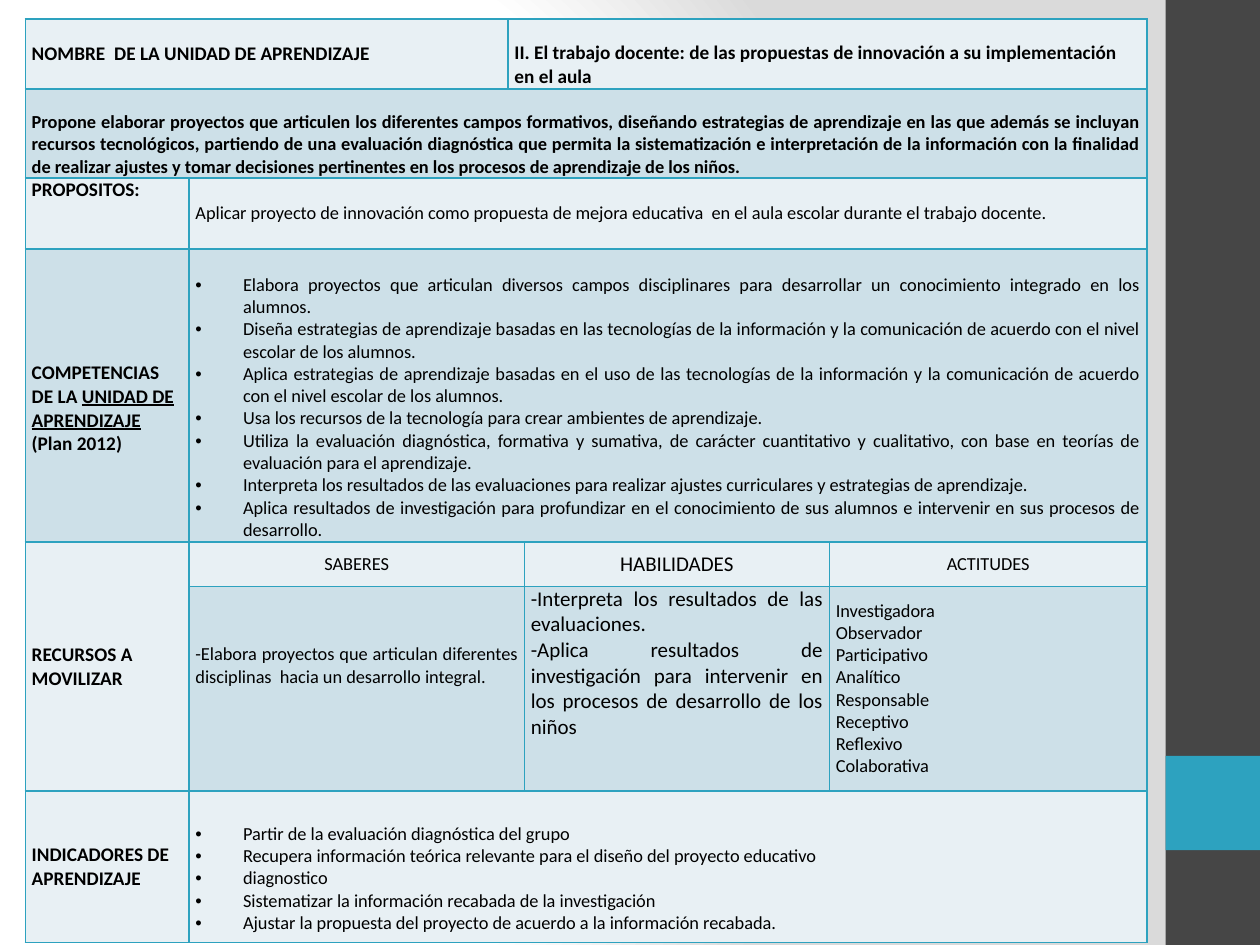
from lxml import etree
from pptx import Presentation
from pptx.dml.color import RGBColor
from pptx.enum import shapes, text
from pptx.oxml import ns
from pptx.util import Cm, Pt

BLACK = RGBColor(0x00, 0x00, 0x00)
CHARCOAL = RGBColor(0x46, 0x46, 0x46)
TEAL = RGBColor(0x2D, 0xA2, 0xBF)
BANDS = RGBColor(0xE8, 0xF0, 0xF4), RGBColor(0xCD, 0xE0, 0xE8)
WHITE = RGBColor(0xFF, 0xFF, 0xFF)
SILVER = RGBColor(0xDA, 0xDA, 0xDA)

LEFT, CENTER, JUSTIFY = text.PP_ALIGN.LEFT, text.PP_ALIGN.CENTER, text.PP_ALIGN.JUSTIFY

PAGE_SIZE = 25.4, 19.05
SIDEBAR = [(0, 19.05, CHARCOAL), (15.24, 1.9, TEAL)]
SIDEBAR_LEFT, SIDEBAR_WIDTH = 23.5, 1.9
BACKGROUND_STOPS = [(0, WHITE), (75, WHITE), (100, SILVER)]
BACKGROUND_FOCUS = {"l": 20, "t": 50, "r": 100, "b": 50}

TABLE_LEFT, TABLE_TOP = 0.51, 0.38
COLUMN_WIDTHS = [3.3, 6.43, 0.33, 6.15, 6.4]
ROW_HEIGHTS = [1.41, 1.8, 1.43, 5.91, 0.89, 3.94, 3.05]
SIDE_MARGIN, BULLET_INDENT = 0.13, 0.96

HEADING = {"size": 11, "bold": True}
BODY = {"size": 10.5, "align": JUSTIFY}
LIST = {**BODY, "bullet": True, "above": 0.48}
TITLE = {"size": 10.5, "align": CENTER}

CELLS = [
    (0, 0, 1, 2, HEADING, ["NOMBRE  DE LA UNIDAD DE APRENDIZAJE"]),
    (0, 2, 1, 3, {**HEADING, "above": 0.45}, [
        "II. El trabajo docente: de las propuestas de innovación a su implementación en el aula"]),
    (1, 0, 1, 5, {**BODY, "bold": True, "above": 0.45}, [
        "Propone elaborar proyectos que articulen los diferentes campos formativos, diseñando "
        "estrategias de aprendizaje en las que además se incluyan recursos tecnológicos, partiendo "
        "de una evaluación diagnóstica que permita la sistematización e interpretación de la "
        "información con la finalidad de realizar ajustes y tomar decisiones pertinentes en los "
        "procesos de aprendizaje de los niños."]),
    (2, 0, 1, 1, {**HEADING, "below": 0.94}, ["PROPOSITOS:"]),
    (2, 1, 1, 4, {"size": 10.5}, [
        "Aplicar proyecto de innovación como propuesta de mejora educativa  en el aula escolar "
        "durante el trabajo docente."]),
    (3, 0, 1, 1, {**HEADING, "above": 0.52}, [
        [("COMPETENCIAS DE LA ", False), ("UNIDAD DE APRENDIZAJE", True), (" (Plan 2012)", False)]]),
    (3, 1, 1, 4, LIST, [
        "Elabora proyectos que articulan diversos campos disciplinares para desarrollar un "
        "conocimiento integrado en los alumnos.",
        "Diseña estrategias de aprendizaje basadas en las tecnologías de la información y la "
        "comunicación de acuerdo con el nivel escolar de los alumnos.",
        "Aplica estrategias de aprendizaje basadas en el uso de las tecnologías de la información "
        "y la comunicación de acuerdo con el nivel escolar de los alumnos.",
        "Usa los recursos de la tecnología para crear ambientes de aprendizaje.",
        "Utiliza la evaluación diagnóstica, formativa y sumativa, de carácter cuantitativo y "
        "cualitativo, con base en teorías de evaluación para el aprendizaje.",
        "Interpreta los resultados de las evaluaciones para realizar ajustes curriculares y "
        "estrategias de aprendizaje.",
        "Aplica resultados de investigación para profundizar en el conocimiento de sus alumnos e "
        "intervenir en sus procesos de desarrollo."]),
    (4, 0, 2, 1, HEADING, ["RECURSOS A MOVILIZAR"]),
    (4, 1, 1, 2, TITLE, ["SABERES"]),
    (4, 3, 1, 1, {**TITLE, "size": 12}, ["HABILIDADES"]),
    (4, 4, 1, 1, TITLE, ["ACTITUDES"]),
    (5, 1, 1, 2, {**BODY, "below": 0.93}, [
        "-Elabora proyectos que articulan diferentes disciplinas  hacia un desarrollo integral."]),
    (5, 3, 1, 1, {**BODY, "size": 12, "below": 1.03}, [
        "-Interpreta los resultados de las evaluaciones.",
        "-Aplica resultados de investigación para intervenir en los procesos de desarrollo de los niños"]),
    (5, 4, 1, 1, {"size": 10.5}, [
        "Investigadora", "Observador", "Participativo", "Analítico",
        "Responsable", "Receptivo", "Reflexivo", "Colaborativa"]),
    (6, 0, 1, 1, HEADING, ["INDICADORES DE APRENDIZAJE"]),
    (6, 1, 1, 4, LIST, [
        "Partir de la evaluación diagnóstica del grupo",
        "Recupera información teórica relevante para el diseño del proyecto educativo",
        "diagnostico",
        "Sistematizar la información recabada de la investigación",
        "Ajustar la propuesta del proyecto de acuerdo a la información recabada."]),
]


def add_element(parent, tag, **values):
    return etree.SubElement(parent, ns.qn(tag), {key: str(value) for key, value in values.items()})


def paint_background(page):
    fill = page.background.fill
    fill.gradient()
    gradient = page.background._cSld.find(".//" + ns.qn("a:gradFill"))
    for child in list(gradient):
        gradient.remove(child)
    stops = add_element(gradient, "a:gsLst")
    for position, color in BACKGROUND_STOPS:
        stop = add_element(stops, "a:gs", pos=position * 1000)
        add_element(stop, "a:srgbClr", val=color)
    circle = add_element(gradient, "a:path", path="circle")
    focus = {side: value * 1000 for side, value in BACKGROUND_FOCUS.items()}
    add_element(circle, "a:fillToRect", **focus)


def add_sidebar(page):
    for top, height, color in SIDEBAR:
        box = page.shapes.add_shape(
            shapes.MSO_SHAPE.RECTANGLE, Cm(SIDEBAR_LEFT), Cm(top), Cm(SIDEBAR_WIDTH), Cm(height))
        box.shadow.inherit = False
        box.fill.solid()
        box.fill.fore_color.rgb = color
        box.line.fill.background()


def style_cell(cell, color):
    cell.fill.solid()
    cell.fill.fore_color.rgb = color
    properties = cell._tc.get_or_add_tcPr()
    for index, side in enumerate(("a:lnL", "a:lnR", "a:lnT", "a:lnB")):
        border = add_element(properties, side, w=Pt(1))
        add_element(add_element(border, "a:solidFill"), "a:srgbClr", val=TEAL)
        properties.insert(index, border)


def write_cell(cell, style, lines):
    layout = {
        "vertical_anchor": text.MSO_ANCHOR.MIDDLE,
        "margin_left": Cm(SIDE_MARGIN), "margin_right": Cm(SIDE_MARGIN),
        "margin_top": Cm(style.get("above", 0)), "margin_bottom": Cm(style.get("below", 0)),
    }
    for name, value in layout.items():
        setattr(cell, name, value)
    frame = cell.text_frame
    for index, line in enumerate(lines):
        para = frame.add_paragraph() if index else frame.paragraphs[0]
        para.alignment = style.get("align", LEFT)
        if style.get("bullet"):
            properties = para._p.get_or_add_pPr()
            properties.set("marL", str(Cm(BULLET_INDENT)))
            properties.set("indent", str(-Cm(BULLET_INDENT)))
            add_element(properties, "a:buFont", typeface="Arial")
            add_element(properties, "a:buChar", char="•")
        for words, underline in [(line, False)] if isinstance(line, str) else line:
            span = para.add_run()
            span.text = words
            formats = {"name": "Calibri", "size": Pt(style["size"]),
                       "bold": style.get("bold", False), "underline": underline}
            for name, value in formats.items():
                setattr(span.font, name, value)
            span.font.color.rgb = BLACK


def add_unit_table(page):
    table = page.shapes.add_table(
        len(ROW_HEIGHTS), len(COLUMN_WIDTHS), Cm(TABLE_LEFT), Cm(TABLE_TOP),
        Cm(sum(COLUMN_WIDTHS)), Cm(sum(ROW_HEIGHTS))).table
    table.first_row = table.horz_banding = False
    for column, width in zip(table.columns, COLUMN_WIDTHS):
        column.width = Cm(width)
    for index, (row, height) in enumerate(zip(table.rows, ROW_HEIGHTS)):
        row.height = Cm(height)
        for cell in row.cells:
            style_cell(cell, BANDS[index % 2])
    for row, column, row_span, column_span, style, lines in CELLS:
        cell = table.cell(row, column)
        if row_span * column_span > 1:
            cell.merge(table.cell(row + row_span - 1, column + column_span - 1))
        write_cell(cell, style, lines)


def main():
    deck = Presentation()
    deck.slide_width, deck.slide_height = map(Cm, PAGE_SIZE)
    page = deck.slides.add_slide(deck.slide_layouts[6])
    paint_background(page)
    add_sidebar(page)
    add_unit_table(page)
    deck.save("out.pptx")


if __name__ == "__main__":
    main()
